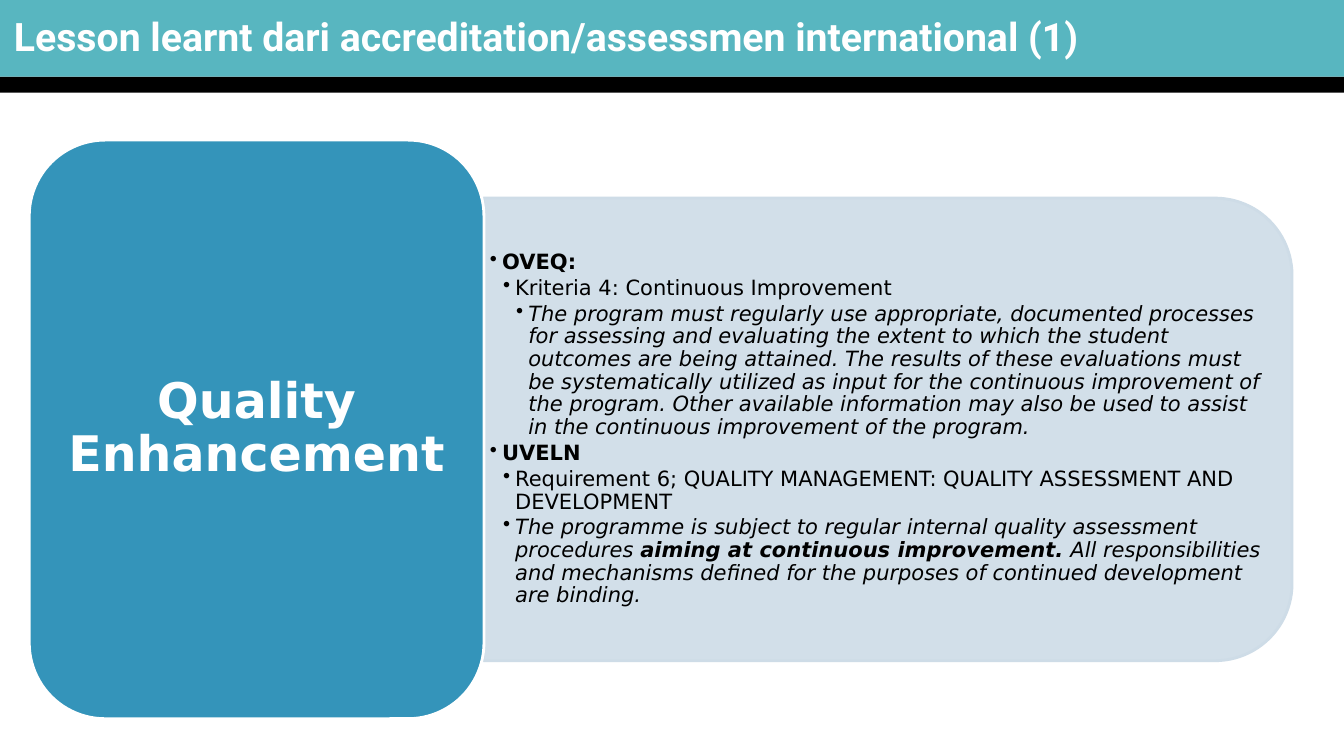
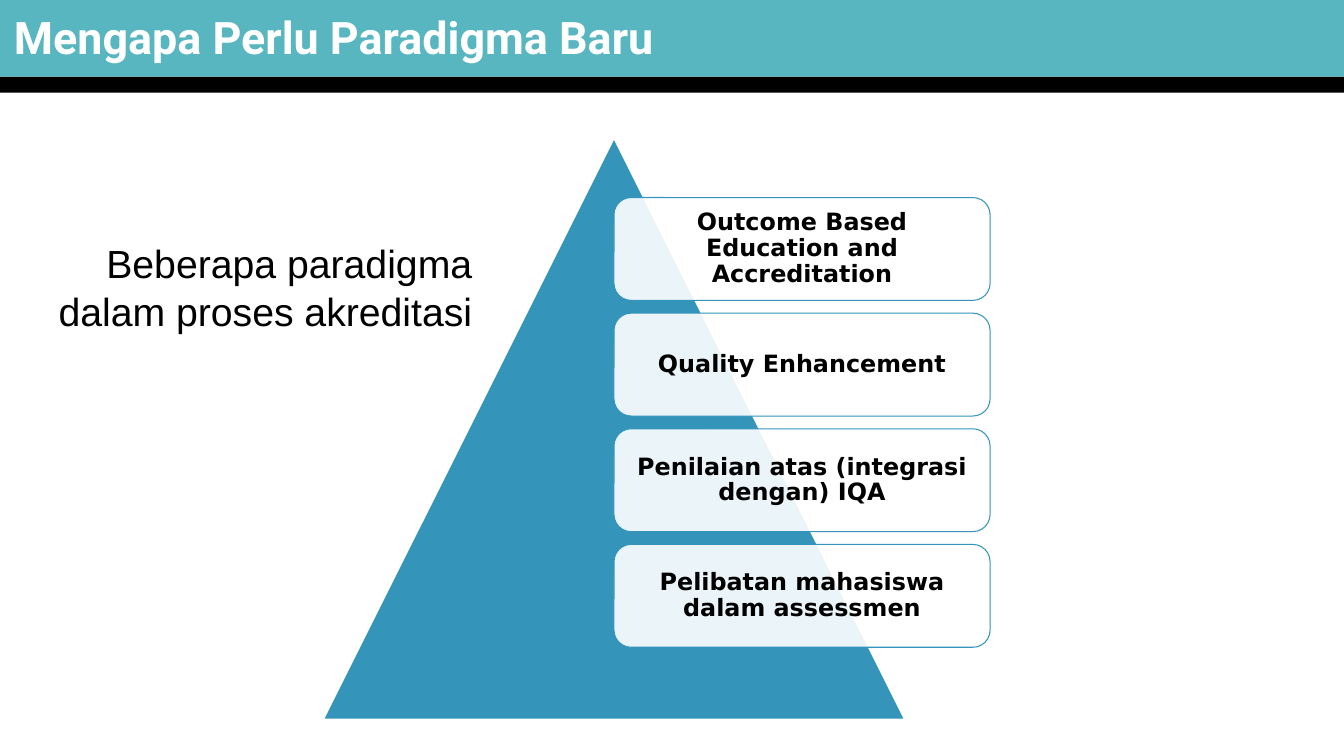
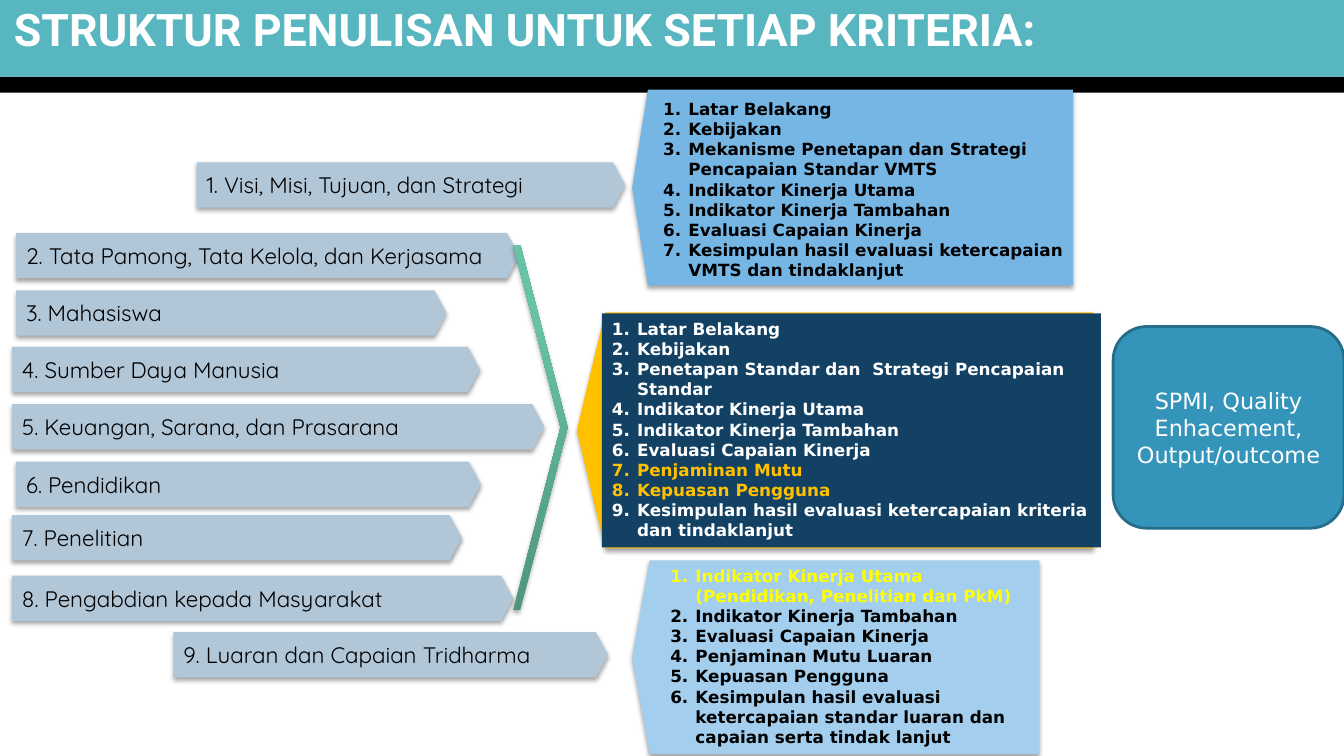
from lxml import etree
from pptx import Presentation
from pptx.dml.color import RGBColor
from pptx.enum import shapes, text
from pptx.oxml import ns
from pptx.util import Inches, Pt

WHITE = RGBColor(0xFF, 0xFF, 0xFF)
BLACK = RGBColor(0, 0, 0)
TEAL = RGBColor(0x58, 0xB6, 0xC0)
BLUE = RGBColor(0x34, 0x94, 0xBA)
EDGE = RGBColor(0x26, 0x6D, 0x8A)
PALE = RGBColor(0xCE, 0xDC, 0xE7)
STEEL = RGBColor(0xB1, 0xC6, 0xD7)
SKY = RGBColor(0x75, 0xB6, 0xE5)
LIGHT = RGBColor(0xA3, 0xCE, 0xED)
NAVY = RGBColor(0x13, 0x41, 0x63)
GOLD = RGBColor(0xFF, 0xC0, 0x00)
YELLOW = RGBColor(0xFF, 0xFF, 0x00)
DEEP = RGBColor(0x4F, 0x95, 0x80)
MINT = RGBColor(0x67, 0xC2, 0xA6)
SANS = "DejaVu Sans"
KIND = shapes.MSO_SHAPE
LEFT, MID, RIGHT = text.PP_ALIGN.LEFT, text.PP_ALIGN.CENTER, text.PP_ALIGN.RIGHT
TOP, HALF = text.MSO_ANCHOR.TOP, text.MSO_ANCHOR.MIDDLE


def draw(slide, kind, at, fill=None, line=None, width=2, alpha=None,
         adj=None, turn=0, shade=False):
    """Add a shape, or a text box when kind is None."""
    at = [Inches(n) for n in at]
    if kind is None:
        return slide.shapes.add_textbox(*at)
    item = slide.shapes.add_shape(kind, *at)
    item.shadow.inherit = False
    item.rotation = turn
    if adj:
        item.adjustments[0] = adj
    if fill is not None:
        item.fill.solid()
        item.fill.fore_color.rgb = fill
    if line is None:
        item.line.fill.background()
    else:
        item.line.color.rgb = line
        item.line.width = Pt(width)
    props = item._element.spPr
    if alpha:
        tone = props.find(ns.qn("a:solidFill")).find(ns.qn("a:srgbClr"))
        etree.SubElement(tone, ns.qn("a:alpha"), val=str(alpha * 1000))
    if shade:
        cast = etree.SubElement(
            props.find(ns.qn("a:effectLst")), ns.qn("a:outerShdw"),
            blurRad=str(Pt(3.1)), dist=str(Pt(1.8)), dir="5400000",
            algn="t", rotWithShape="0")
        tone = etree.SubElement(cast, ns.qn("a:srgbClr"), val="000000")
        etree.SubElement(tone, ns.qn("a:alpha"), val="35000")
    return item


def write(item, paras, size, font=SANS, align=LEFT, anchor=HALF,
          pad=(0.1, 0.05), mark=None, hang=0, lead=None, after=None):
    """Each paragraph is (indent, runs); each run is (words, style, colour)."""
    frame = item.text_frame
    frame.word_wrap = True
    frame.vertical_anchor = anchor
    frame.margin_left = frame.margin_right = Inches(pad[0])
    frame.margin_top = frame.margin_bottom = Inches(pad[1])
    for i, (indent, runs) in enumerate(paras):
        para = frame.add_paragraph() if i else frame.paragraphs[0]
        para.alignment = align
        if mark:
            props = para._p.get_or_add_pPr()
            props.set("marL", str(Inches(indent)))
            props.set("indent", str(-Inches(hang)))
            if mark == "num":
                etree.SubElement(props, ns.qn("a:buAutoNum"), type="arabicPeriod")
            else:
                etree.SubElement(props, ns.qn("a:buChar"), char=mark)
        if lead:
            para.line_spacing = lead
        if after:
            para.space_after = Pt(after)
        for words, style, tone in runs:
            run = para.add_run()
            run.text = words
            run.font.name = font
            run.font.size = Pt(size)
            run.font.bold = "b" in style
            run.font.italic = "i" in style
            run.font.color.rgb = tone


deck = Presentation()
deck.slide_width, deck.slide_height = Inches(13.33), Inches(7.5)

# Shared bands and titles
pages = []
for title, size, top, high in [
    ("Lesson learnt dari accreditation/assessmen international (1)", 28, 0.05, 0.62),
    ("Mengapa Perlu Paradigma Baru", 32, 0.05, 0.62),
    ("STRUKTUR PENULISAN UNTUK SETIAP KRITERIA:", 32, 0, 0.56),
]:
    page = deck.slides.add_slide(deck.slide_layouts[6])
    draw(page, KIND.RECTANGLE, (0, 0.76, 13.33, 0.16), BLACK)
    draw(page, KIND.RECTANGLE, (0, 0, 13.33, 0.76), TEAL)
    head = draw(page, None, (0.04, top, 12.61, high))
    write(head, [(0, [(title, "b", WHITE)])], size, "Roboto")
    pages.append(page)
lesson, reason, layout = pages

# Slide 1: quality enhancement
draw(lesson, KIND.ROUND_2_SAME_RECTANGLE, (6.51, 0.25, 4.59, 8.02), PALE, PALE,
     alpha=90, turn=90)
points = [
    (0.12, [("OVEQ:", "b", BLACK)]),
    (0.25, [("Kriteria 4: Continuous Improvement", "", BLACK)]),
    (0.38, [("The program must regularly use appropriate, documented processes "
             "for assessing and evaluating the extent to which the student "
             "outcomes are being attained. The results of these evaluations "
             "must be systematically utilized as input for the continuous "
             "improvement of the program. Other available information may also "
             "be used to assist in the continuous improvement of the program.",
             "i", BLACK)]),
    (0.12, [("UVELN", "b", BLACK)]),
    (0.25, [("Requirement 6; QUALITY MANAGEMENT: QUALITY ASSESSMENT AND "
             "DEVELOPMENT", "", BLACK)]),
    (0.25, [("The programme is subject to regular internal quality assessment "
             "procedures ", "i", BLACK),
            ("aiming at continuous improvement.", "bi", BLACK),
            (" All responsibilities and mechanisms defined for the purposes of "
             "continued development are binding.", "i", BLACK)]),
]
body = draw(lesson, None, (4.8, 2.19, 7.79, 4.14))
write(body, points, 15, pad=(0.06, 0.03), mark="•", hang=0.12, lead=0.9, after=2.25)
card = draw(lesson, KIND.ROUNDED_RECTANGLE, (0.29, 1.39, 4.51, 5.74), BLUE, WHITE)
write(card, [(0, [("Quality Enhancement", "b", WHITE)])], 35, align=MID,
      pad=(0.15, 0.07), lead=0.9)

# Slide 2: pyramid of paradigms
draw(reason, KIND.ISOSCELES_TRIANGLE, (3.22, 1.39, 5.74, 5.74), BLUE)
for i, words in enumerate([
    "Outcome Based Education and Accreditation",
    "Quality Enhancement",
    "Penilaian atas (integrasi dengan) IQA",
    "Pelibatan mahasiswa dalam assessmen",
]):
    card = draw(reason, KIND.ROUNDED_RECTANGLE, (6.09, 1.96 + 1.147 * i, 3.73, 1.02),
                WHITE, BLUE, 0.75, alpha=90)
    write(card, [(0, [(words, "b", BLACK)])], 17, align=MID, pad=(0.07, 0.07), lead=0.9)
note = draw(reason, None, (0.21, 2.33, 4.57, 1.04))
write(note, [(0, [("Beberapa paradigma dalam proses akreditasi", "", BLACK)])], 28,
      "Arial", RIGHT, TOP)

# Slide 3: the nine criteria
for left, top, wide, words in [
    (1.95, 1.61, 4.25, "1. Visi, Misi, Tujuan, dan Strategi"),
    (0.16, 2.31, 4.99, "2. Tata Pamong, Tata Kelola, dan Kerjasama"),
    (0.16, 2.88, 4.27, "3. Mahasiswa"),
    (0.12, 3.44, 4.64, "4. Sumber Daya Manusia"),
    (0.12, 4.01, 5.28, "5. Keuangan, Sarana, dan Prasarana"),
    (0.16, 4.58, 4.61, "6. Pendidikan"),
    (0.12, 5.11, 4.46, "7. Penelitian"),
    (0.12, 5.71, 4.97, "8. Pengabdian kepada Masyarakat"),
    (1.72, 6.27, 4.31, "9. Luaran dan Capaian Tridharma"),
]:
    tag = draw(layout, KIND.PENTAGON, (left, top, wide, 0.45), STEEL, adj=0.27, shade=True)
    write(tag, [(0, [(words, "", BLACK)])], 16, "Quicksand")

# Outlines: pointed plate, list box, base colour, lines in another colour
for plate, fill, adj, spot, back, tone, accent, picks, lines in [
    ((6.27, 0.89, 4.37, 1.94), SKY, 0.08, (6.48, 0.93, 4.26, 1.9), None,
     BLACK, BLACK, (), [
        "Latar Belakang",
        "Kebijakan",
        "Mekanisme Penetapan dan Strategi Pencapaian Standar VMTS",
        "Indikator Kinerja Utama",
        "Indikator Kinerja Tambahan",
        "Evaluasi Capaian Kinerja",
        "Kesimpulan hasil evaluasi ketercapaian VMTS dan tindaklanjut"]),
    ((6.27, 5.56, 4.04, 1.92), LIGHT, 0.09, (6.55, 5.56, 3.83, 1.92), None,
     BLACK, YELLOW, (1,), [
        "Indikator Kinerja Utama (Pendidikan, Penelitian dan PkM)",
        "Indikator Kinerja Tambahan",
        "Evaluasi Capaian Kinerja",
        "Penjaminan Mutu Luaran",
        "Kepuasan Pengguna",
        "Kesimpulan hasil evaluasi ketercapaian standar luaran dan capaian "
        "serta tindak lanjut"]),
    ((5.72, 3.1, 5.12, 2.34), GOLD, 0.12, (5.97, 3.11, 4.95, 2.32), NAVY,
     WHITE, GOLD, (7, 8), [
        "Latar Belakang",
        "Kebijakan",
        "Penetapan Standar dan  Strategi Pencapaian Standar",
        "Indikator Kinerja Utama",
        "Indikator Kinerja Tambahan",
        "Evaluasi Capaian Kinerja",
        "Penjaminan Mutu",
        "Kepuasan Pengguna",
        "Kesimpulan hasil evaluasi ketercapaian kriteria dan tindaklanjut"]),
]:
    draw(layout, KIND.PENTAGON, plate, fill, adj=adj, turn=180, shade=True)
    area = draw(layout, KIND.RECTANGLE if back else None, spot, back)
    items = [(0.25, [(words, "b", accent if n in picks else tone)])
             for n, words in enumerate(lines, 1)]
    write(area, items, 12, anchor=TOP, mark="num", hang=0.25)

# Bracket from criteria 2-8 to their outline
arrow = draw(layout, KIND.CHEVRON, (5.09, 2.43, 0.54, 3.62), adj=0.87, shade=True)
arrow.fill.gradient()
arrow.fill.gradient_angle = 90
for stop, place, tone in zip(arrow.fill.gradient_stops, (0, 0.8), (DEEP, MINT)):
    stop.position = place
    stop.color.rgb = tone

# Result
goal = draw(layout, KIND.ROUNDED_RECTANGLE, (11.04, 3.24, 2.29, 2), BLUE, EDGE)
write(goal, [(0, [("SPMI, Quality Enhacement, Output/outcome", "", WHITE)])], 16, align=MID)

deck.save("out.pptx")
